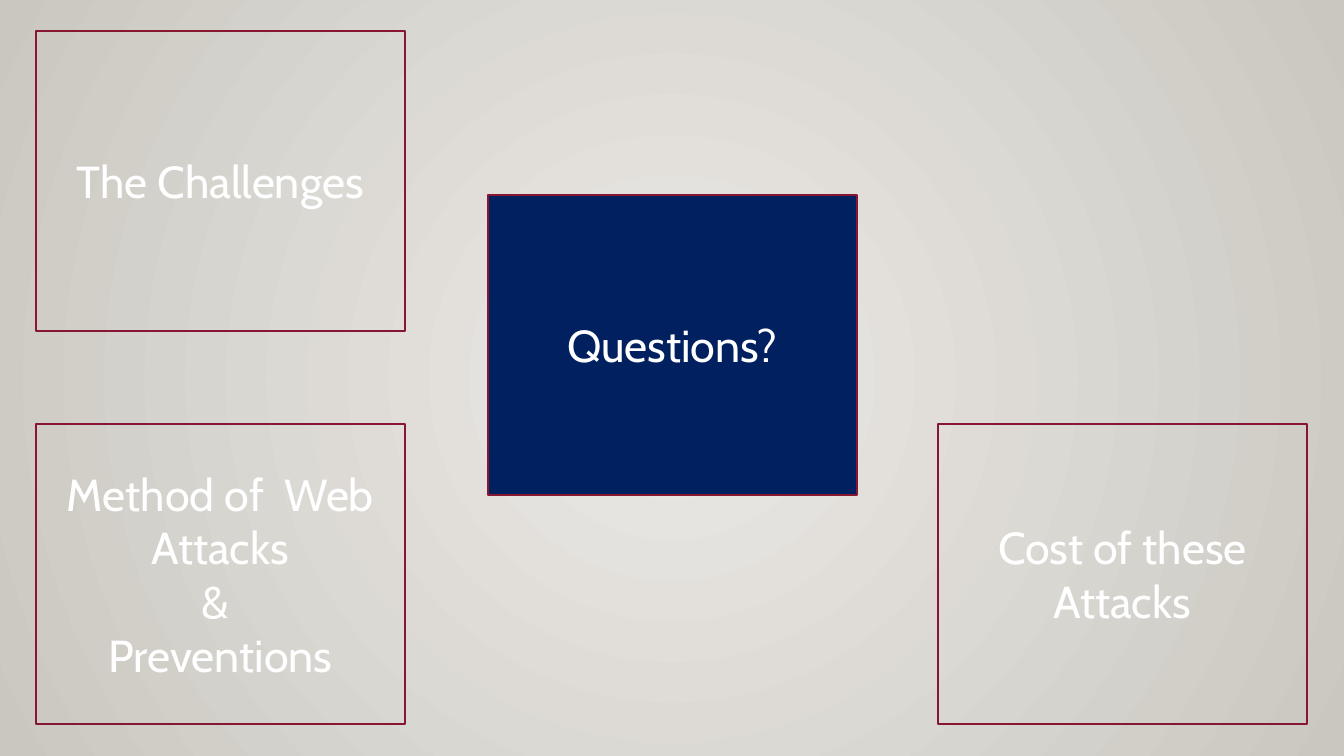
import pptx
import pptx.dml.color
import pptx.enum.shapes
import pptx.enum.text
import pptx.oxml
import pptx.oxml.ns
import pptx.util

THEME = {
    "centre": "ECEAE7",
    "edge": "CAC7C1",
    "outline": "871631",
    "highlight": "002060",
    "text": "FFFFFF",
    "font": "Cabin",
    "size": 32,
    "outline_width": 1.25,
}
EMU_PER_PX = 914400 / 100.8
TILE_WIDTH, TILE_HEIGHT = 369, 300


def px(length):
    return pptx.util.Emu(round(length * EMU_PER_PX))


def color(name):
    return pptx.dml.color.RGBColor.from_string(THEME[name])


deck = pptx.Presentation()
deck.slide_width, deck.slide_height = px(1344), px(756)
slide = deck.slides.add_slide(deck.slide_layouts[6])

# Radial background, light in the middle
backdrop = slide.background.fill
backdrop.gradient()
for stop, name, position in zip(backdrop.gradient_stops, ("centre", "edge"), (0, 1)):
    stop.color.rgb = color(name)
    stop.position = position
gradient = slide.element.find(".//" + pptx.oxml.ns.qn("a:gradFill"))
gradient.remove(gradient.find(pptx.oxml.ns.qn("a:lin")))
gradient.append(pptx.oxml.parse_xml(
    f'<a:path {pptx.oxml.ns.nsdecls("a")} path="circle">'
    '<a:fillToRect l="50000" t="50000" r="50000" b="50000"/></a:path>'
))

# Topic tiles: left, top, fill, paragraphs
topics = [
    (36, 31, None, ["The Challenges"]),
    (488, 195, "highlight", ["Questions?"]),
    (36, 424, None, ["Method of  Web Attacks", "& ", "Preventions"]),
    (938, 424, None, ["Cost of these Attacks"]),
]
for left, top, fill, lines in topics:
    tile = slide.shapes.add_shape(
        pptx.enum.shapes.MSO_SHAPE.RECTANGLE,
        px(left), px(top), px(TILE_WIDTH), px(TILE_HEIGHT),
    )
    tile.shadow.inherit = False
    if fill:
        tile.fill.solid()
        tile.fill.fore_color.rgb = color(fill)
    else:
        tile.fill.background()
    tile.line.color.rgb = color("outline")
    tile.line.width = pptx.util.Pt(THEME["outline_width"])

    label = tile.text_frame
    label.word_wrap = True
    label.vertical_anchor = pptx.enum.text.MSO_ANCHOR.MIDDLE
    for index, line in enumerate(lines):
        paragraph = label.add_paragraph() if index else label.paragraphs[0]
        paragraph.alignment = pptx.enum.text.PP_ALIGN.CENTER
        run = paragraph.add_run()
        run.text = line
        run.font.name = THEME["font"]
        run.font.size = pptx.util.Pt(THEME["size"])
        run.font.color.rgb = color("text")

deck.save("out.pptx")
